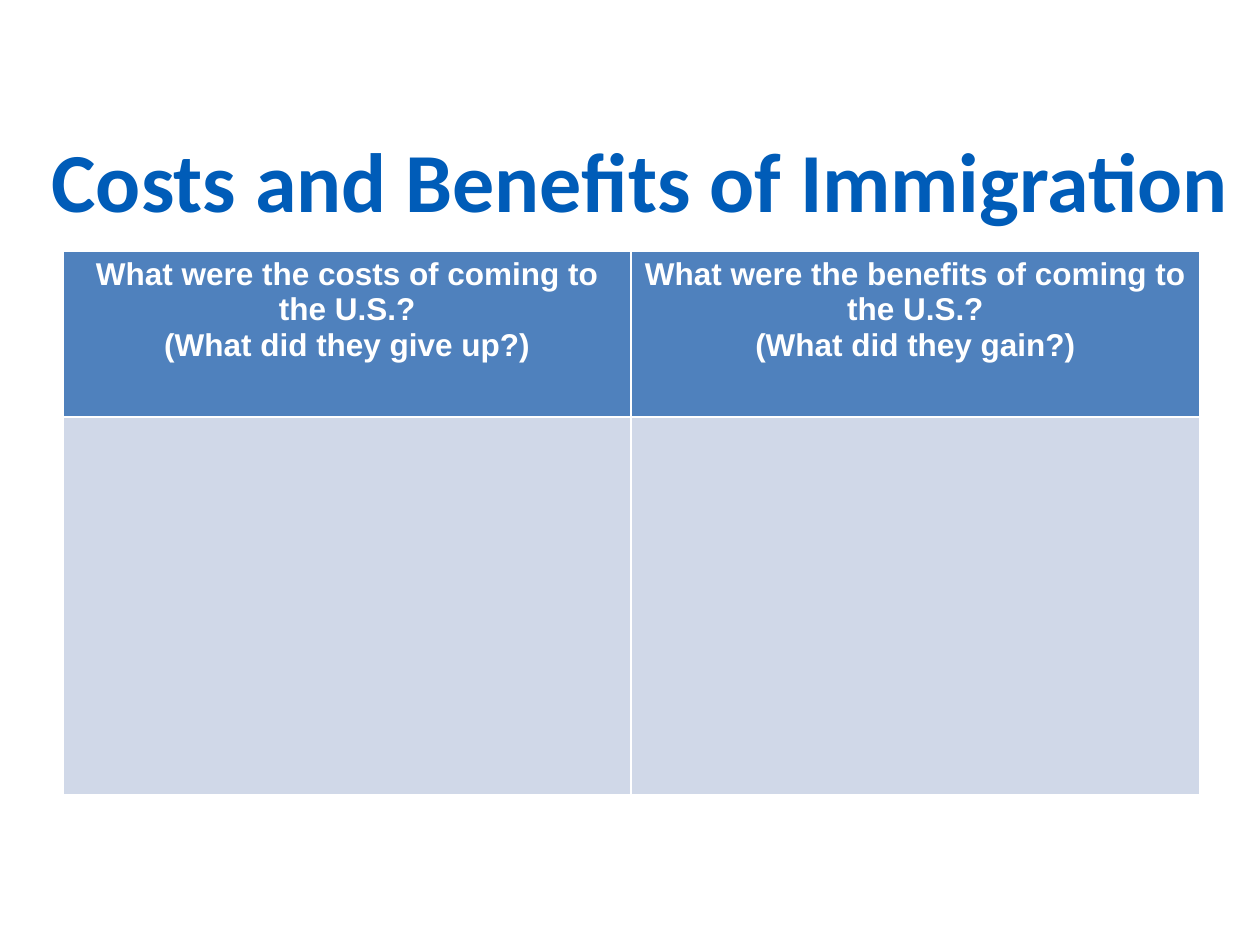
"""Build a slide with a two-column table on the costs and benefits of immigration."""
from pptx import Presentation
from pptx.dml.color import RGBColor
from pptx.enum.text import MSO_ANCHOR, MSO_AUTO_SIZE, PP_ALIGN
from pptx.util import Inches, Pt

TITLE = "Costs and Benefits of Immigration"
HEADINGS = [
    ("What were the costs of coming to the U.S.?", "(What did they give up?)"),
    ("What were the benefits of coming to the U.S.?", "(What did they gain?)"),
]
COLORS = {"title": "005CB8", "header": "4F81BD", "body": "D0D8E8", "header_text": "FFFFFF"}
TITLE_AREA = (0.11, 0.8, 9.94, 1.25)
TABLE_LEFT, TABLE_TOP, TABLE_WIDTH = 0.5, 1.99, 9.02
ROW_HEIGHTS = {"header": 1.32, "body": 3}


def style_paragraph(paragraph, font_name, size, color):
    paragraph.alignment = PP_ALIGN.CENTER
    font = paragraph.font
    font.name, font.size, font.bold = font_name, Pt(size), True
    font.color.rgb = RGBColor.from_string(COLORS[color])


def add_title(slide):
    title = slide.shapes.title
    title.left, title.top, title.width, title.height = map(Inches, TITLE_AREA)
    frame = title.text_frame
    frame.text = TITLE
    frame.word_wrap = True
    frame.auto_size = MSO_AUTO_SIZE.NONE
    frame.vertical_anchor = MSO_ANCHOR.MIDDLE
    paragraph = frame.paragraphs[0]
    paragraph.line_spacing = Pt(57)
    style_paragraph(paragraph, "Calibri", 48, "title")


def add_comparison_table(slide):
    lengths = (TABLE_LEFT, TABLE_TOP, TABLE_WIDTH, sum(ROW_HEIGHTS.values()))
    table = slide.shapes.add_table(
        len(ROW_HEIGHTS), len(HEADINGS), *map(Inches, lengths)
    ).table
    for row, (role, height) in zip(table.rows, ROW_HEIGHTS.items()):
        row.height = Inches(height)
        for cell in row.cells:
            cell.fill.solid()
            cell.fill.fore_color.rgb = RGBColor.from_string(COLORS[role])
    for cell, lines in zip(table.rows[0].cells, HEADINGS):
        cell.text = "\n".join(lines)
        for paragraph in cell.text_frame.paragraphs:
            style_paragraph(paragraph, "Arial", 18, "header_text")


def main():
    deck = Presentation()
    deck.slide_width, deck.slide_height = Inches(10), Inches(7.5)
    slide = deck.slides.add_slide(deck.slide_layouts.get_by_name("Title Only"))
    add_title(slide)
    add_comparison_table(slide)
    deck.save("out.pptx")


if __name__ == "__main__":
    main()
